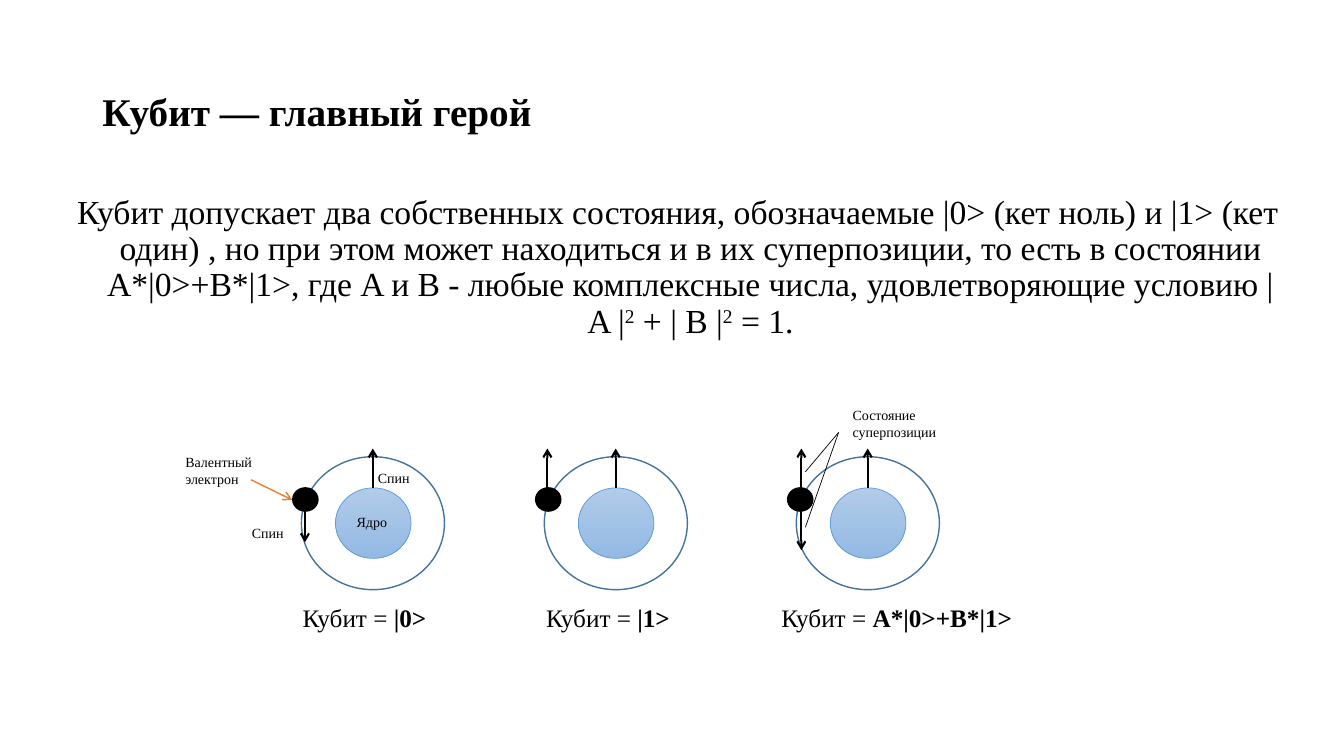
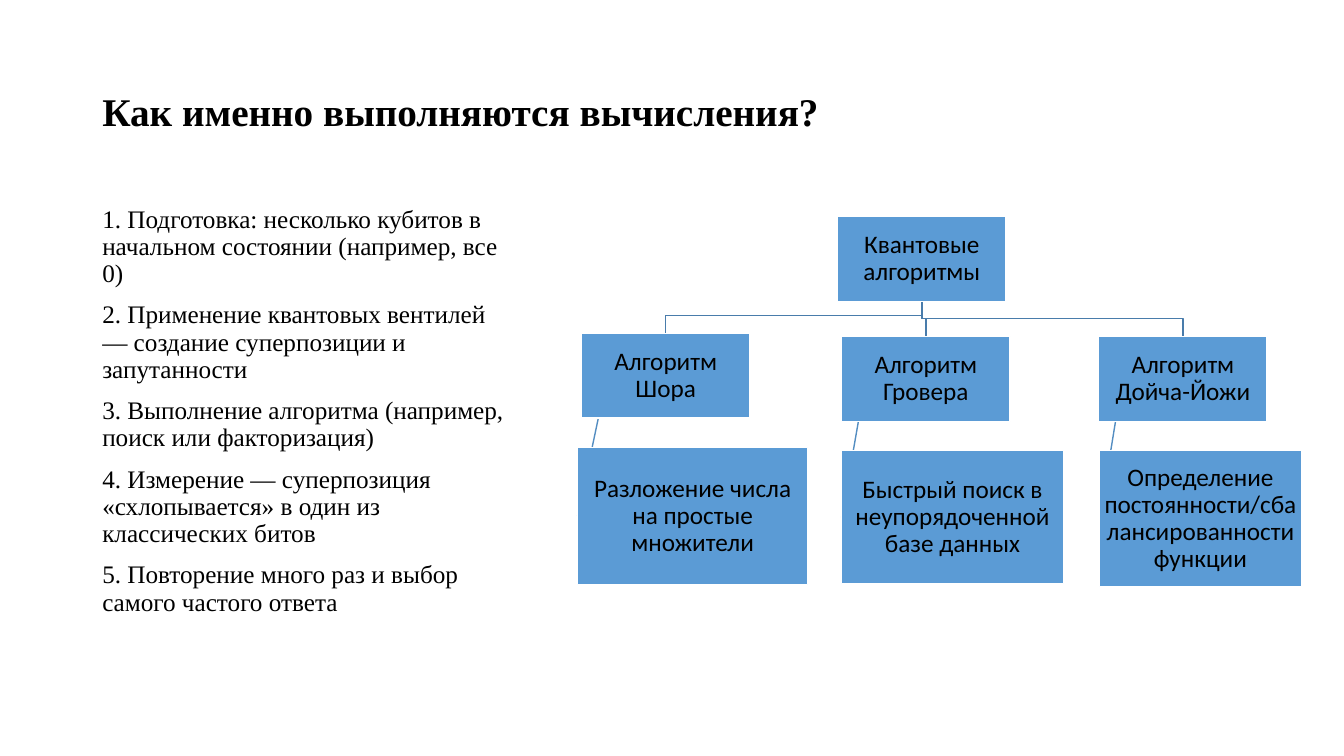
from lxml import etree
from pptx import Presentation
from pptx import util as u
from pptx.dml import color
from pptx.enum import shapes, text
from pptx.oxml import ns

Pt = u.Pt
COLORS = {"ink": "000000", "orbit": "43739E", "edge": "5B9BD5", "core_top": "B1CBE9",
          "core_bottom": "93B9E4", "pointer": "ED7D31", "box": "5B9BD5",
          "box_edge": "FFFFFF", "branch": "497CAB", "link": "538DC1"}
SERIF, SANS = "Times New Roman", "Calibri"
LEFT, CENTER = text.PP_ALIGN.LEFT, text.PP_ALIGN.CENTER
INSET = (7.2, 3.6)

# Content: a run is plain text or (text, style)
QUBIT_TITLE = "Кубит — главный герой"
QUBIT_TEXT = [
    "Кубит допускает два собственных состояния, обозначаемые |0> (кет ноль) и |1> (кет один) , "
    "но при этом может находиться и в их суперпозиции, то есть в состоянии А*|0>+В*|1>, "
    "где A и B - любые комплексные числа, удовлетворяющие условию | A |",
    ("2", "super"), " + | B |", ("2", "super"), " = 1."]
# orbit left, electron spin arrows (x offset, from y, to y), state, caption left and width
ATOMS = [
    (215.3, [(2.5, 359.3, 387.4)], "|0>", 209, 120),
    (388.8, [(2.2, 348.5, 320.4)], "|1>", 383, 114),
    (568.8, [(3.6, 348.5, 320.4), (3.6, 365, 393)], "А*|0>+В*|1>", 551, 186),
]
# label, left, top, width, height
ATOM_LABELS = [
    ("Валентный электрон", 125.3, 320.4, 77.8, 31.7),
    ("Ядро", 247.7, 363.6, 48, 19.4),
    ("Спин", 172.8, 370.8, 41.8, 19.4),
    ("Спин", 262.8, 331.9, 41.8, 19.4),
    ("Состояние суперпозиции", 602, 286.6, 113.8, 31.7),
]

STEPS_TITLE = "Как именно выполняются вычисления?"
STEPS = [
    "1. Подготовка: несколько кубитов в начальном состоянии (например, все 0)",
    "2. Применение квантовых вентилей — создание суперпозиции и запутанности",
    "3. Выполнение алгоритма (например, поиск или факторизация)",
    "4. Измерение — суперпозиция «схлопывается» в один из классических битов",
    "5. Повторение много раз и выбор самого частого ответа",
]
ROOT = ("Квантовые алгоритмы", 598.3, 154.8)
# algorithm, left, top, task, task left, task width, task height
ALGORITHMS = [
    ("Алгоритм Шора", 415.4, 238.3,
     "Разложение числа на простые множители", 412.6, 164.2, 97.9),
    ("Алгоритм Гровера", 601.2, 240.5,
     "Быстрый поиск в неупорядоченной базе данных", 601.2, 158.4, 95),
    ("Алгоритм Дойча-Йожи", 784.8, 240.5,
     "Определение постоянности/сбалансированности функции", 785.5, 144, 97.2),
]
BOX_W, BOX_H, TASK_DROP, BEND = 120.3, 60.4, 81.4, 13


def rgb(name):
    return color.RGBColor.from_string(COLORS[name])


def write(shape, paragraphs, size, font=SERIF, align=LEFT, spacing=None, before=0,
          bold=False, inset=INSET, middle=False):
    frame = shape.text_frame
    frame.word_wrap = True
    frame.margin_left = frame.margin_right = Pt(inset[0])
    frame.margin_top = frame.margin_bottom = Pt(inset[1])
    frame.vertical_anchor = text.MSO_ANCHOR.MIDDLE if middle else text.MSO_ANCHOR.TOP
    for number, runs in enumerate(paragraphs):
        paragraph = frame.add_paragraph() if number else frame.paragraphs[0]
        paragraph.alignment = align
        if spacing:
            paragraph.line_spacing = spacing
        if number and before:
            paragraph.space_before = Pt(before)
        for item in [runs] if isinstance(runs, str) else runs:
            words, style = (item, "") if isinstance(item, str) else item
            run = paragraph.add_run()
            run.text = words
            run.font.size, run.font.name = Pt(size), font
            run.font.color.rgb = rgb("ink")
            run.font.bold = bold or style == "bold"
            if style == "super":
                run._r.get_or_add_rPr().set("baseline", "30000")


def label(slide, area, paragraphs, size, **style):
    box = slide.shapes.add_textbox(*map(Pt, area))
    write(box, paragraphs, size, **style)
    return box


def preset(slide, kind, area, line, width=1.0, fill=None):
    shape = slide.shapes.add_shape(kind, *map(Pt, area))
    shape.shadow.inherit = False
    shape.line.color.rgb, shape.line.width = rgb(line), Pt(width)
    if fill:
        shape.fill.solid()
        shape.fill.fore_color.rgb = rgb(fill)
    else:
        shape.fill.background()
    return shape


def line(slide, start, end, name="ink", width=1.5, arrow=True):
    connector = slide.shapes.add_connector(
        shapes.MSO_CONNECTOR.STRAIGHT, *map(Pt, (*start, *end)))
    connector.line.color.rgb, connector.line.width = rgb(name), Pt(width)
    if arrow:
        etree.SubElement(connector.line._get_or_add_ln(), ns.qn("a:tailEnd"), type="arrow")
    etree.SubElement(connector._element.spPr, ns.qn("a:effectLst"))


def branch(slide, points, name):
    start, *rest = [tuple(map(Pt, point)) for point in points]
    builder = slide.shapes.build_freeform(*start)
    builder.add_line_segments(rest, close=False)
    outline = builder.convert_to_shape()
    outline.shadow.inherit = False
    outline.fill.background()
    outline.line.color.rgb, outline.line.width = rgb(name), Pt(1)


def titled_slide(deck, title):
    slide = deck.slides.add_slide(deck.slide_layouts[6])
    label(slide, (66, 29, 828, 104.4), [title], 28, bold=True, spacing=0.9, middle=True)
    return slide


def draw_atom(slide, left, spins, state, caption_left, caption_width):
    oval = shapes.MSO_SHAPE.OVAL
    core = preset(slide, oval, (left + 24.3, 348.5, 54, 50.4), "edge", 0.5)
    core.fill.gradient()
    core.fill.gradient_angle = 270
    for stop, name in zip(core.fill.gradient_stops, ("core_top", "core_bottom")):
        stop.color.rgb = rgb(name)
    preset(slide, oval, (left, 326.2, 102.2, 95), "orbit")
    preset(slide, oval, (left - 6.2, 348.5, 18, 16.6), "ink", fill="ink")
    for x, start, end in [(51, 348.5, 320.4), *spins]:
        line(slide, (left + x, start), (left + x, end))
    label(slide, (caption_left, 427, caption_width, 29), [["Кубит = ", (state, "bold")]], 18)


def build_qubit(deck):
    slide = titled_slide(deck, QUBIT_TITLE)
    body = label(slide, (47.5, 136, 873.4, 148.3), [QUBIT_TEXT], 24, align=CENTER, spacing=0.9)
    indents = body.text_frame.paragraphs[0]._p.get_or_add_pPr()
    indents.set("marL", str(Pt(18)))
    indents.set("indent", str(Pt(-18)))
    for atom in ATOMS:
        draw_atom(slide, *atom)
    for words, *area in ATOM_LABELS:
        label(slide, area, [words], 10)
    # Pointers to the electron and to the two superposed spins
    line(slide, (179.3, 342.7), (208.8, 357.1), "pointer", 1)
    for y in (337, 376.6):
        line(slide, (575.3, y), (599, 308.9), width=0.5, arrow=False)


def build_steps(deck):
    slide = titled_slide(deck, STEPS_TITLE)
    label(slide, (66, 144, 305.3, 342.7), STEPS, 18, spacing=0.9, before=10)
    root, root_left, root_top = ROOT
    root_x, root_bottom = root_left + BOX_W / 2, root_top + BOX_H
    boxes = [(root, root_left, root_top, BOX_W, BOX_H)]
    # Branches lie behind the boxes
    for name, left, top, task, task_left, width, height in ALGORITHMS:
        task_top, x = top + TASK_DROP, left + BOX_W / 2
        boxes += [(name, left, top, BOX_W, BOX_H), (task, task_left, task_top, width, height)]
        branch(slide, [(left + 12, top + BOX_H), (task_left, task_top + height / 2)], "link")
        branch(slide, [(root_x, root_bottom), (root_x, top - BEND), (x, top - BEND), (x, top)],
               "branch")
    for words, *area in boxes:
        box = preset(slide, shapes.MSO_SHAPE.RECTANGLE, area, "box_edge", fill="box")
        write(box, [words], 18, font=SANS, align=CENTER, spacing=0.9, inset=(0.9, 0.9),
              middle=True)


def main():
    deck = Presentation()
    deck.slide_width, deck.slide_height = Pt(960), Pt(540)
    build_qubit(deck)
    build_steps(deck)
    deck.save("out.pptx")


if __name__ == "__main__":
    main()
